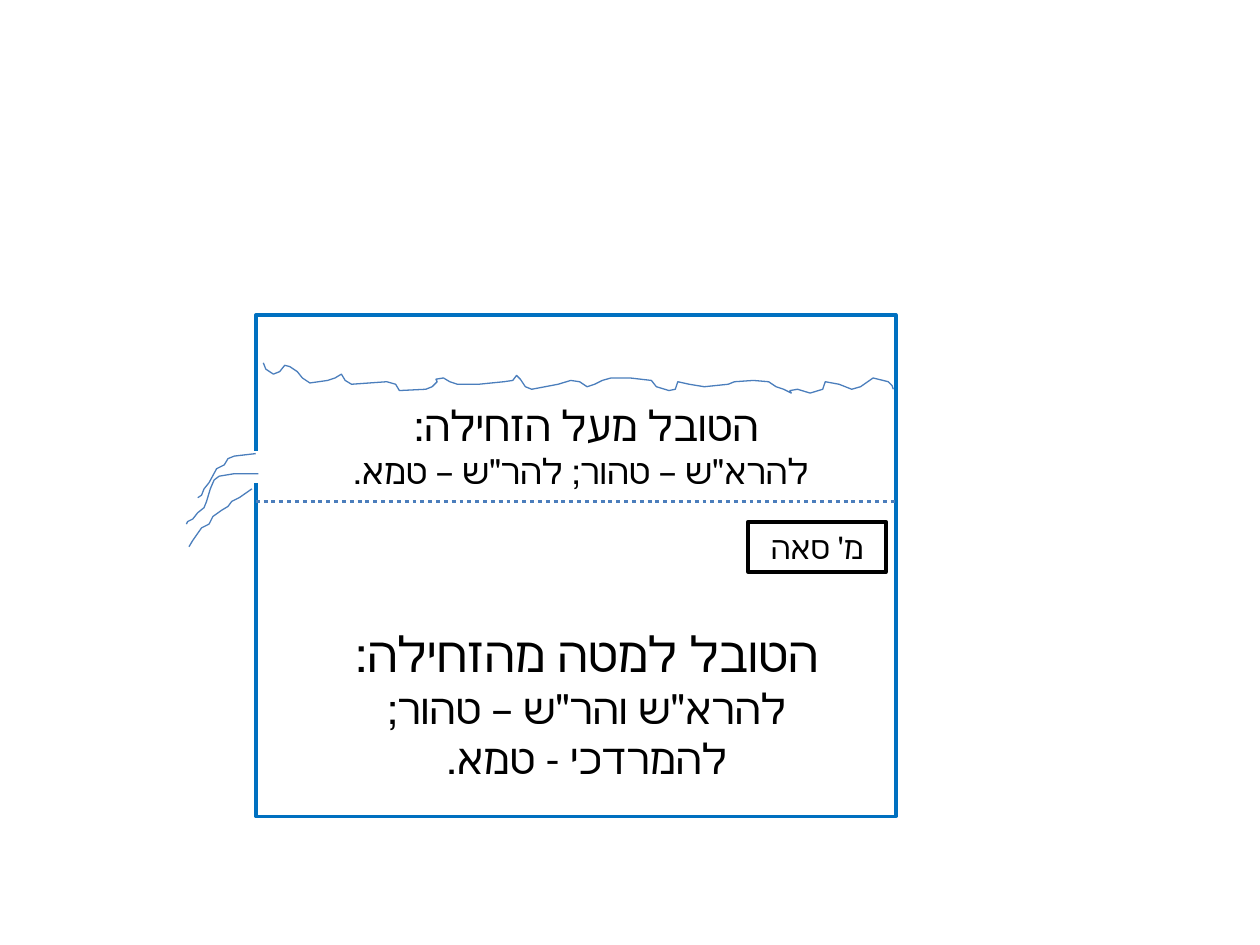
from typing import NamedTuple

from lxml import etree
from pptx import Presentation
from pptx import util as u
from pptx.dml.color import RGBColor
from pptx.enum import dml, shapes, text
from pptx.oxml.ns import qn

PX = 9144  # EMU per px, 100 px to the inch
WHITE, BLACK, TANK_BLUE, WATER_BLUE = "FFFFFF", "000000", "0070C0", "4B7EBC"
FONT = "Calibri"


class Box(NamedTuple):
    left: int
    top: int
    width: int
    height: int


class Run(NamedTuple):
    words: str
    size: int


class Label(NamedTuple):
    box: Box
    paragraphs: list[list[Run]]
    rtl: bool = True
    border: str | None = None


TANK = Box(203, 250, 508, 398)
OUTLET = Box(187, 359, 31, 23)
FLOW_LEVEL = 398

WATER_SURFACE = [
    (209, 288), (211, 293), (217, 297), (222, 295), (226, 290), (230, 291), (236, 295),
    (240, 300), (246, 304), (260, 302), (266, 300), (271, 297), (274, 302), (279, 305),
    (307, 303), (314, 305), (317, 310), (338, 309), (343, 307), (347, 303), (346, 301),
    (352, 300), (357, 303), (363, 305), (380, 305), (400, 303), (407, 302), (410, 298),
    (413, 301), (417, 307), (422, 309), (443, 305), (453, 302), (460, 303), (466, 307),
    (472, 305), (478, 302), (485, 300), (500, 300), (517, 302), (521, 307), (531, 310),
    (536, 309), (538, 303), (547, 305), (559, 307), (578, 305), (583, 303), (598, 302),
    (610, 303), (616, 307), (622, 309), (628, 312), (627, 310), (633, 309), (643, 312),
    (653, 309), (655, 303), (666, 305), (676, 309), (683, 307), (693, 300), (705, 303),
    (708, 306), (709, 309),
]
STREAMS = [
    [(203, 360), (186, 362), (181, 364), (178, 369), (172, 372), (166, 383), (162, 388),
     (160, 393), (157, 395)],
    [(205, 376), (186, 376), (174, 378), (170, 381), (167, 388), (164, 398), (162, 403),
     (157, 407), (153, 412), (149, 414), (148, 416)],
    [(200, 388), (190, 395), (184, 398), (181, 402), (176, 405), (169, 410), (166, 416),
     (160, 419), (153, 429), (150, 434)],
]
LABELS = [
    Label(Box(258, 312, 406, 84), [
        [Run("הטובל מעל הזחילה: ", 24)],
        [Run('להרא"ש – טהור; להר"ש – טמא.', 20)],
    ]),
    Label(Box(250, 490, 431, 138), [
        [Run("הטובל למטה מהזחילה: ", 28),
         Run('להרא"ש והר"ש – טהור; להמרדכי - טמא.', 24)],
    ]),
    Label(Box(594, 414, 109, 40), [[Run("מ' סאה", 18)]], rtl=False, border=BLACK),
]


def color(value: str) -> RGBColor:
    return RGBColor.from_string(value)


def emu(box: Box) -> list[int]:
    return [length * PX for length in box]


def set_line(shape, line_color: str, points: float) -> None:
    shape.line.color.rgb = color(line_color)
    shape.line.width = u.Pt(points)


def add_rectangle(slide, box: Box, line_color: str) -> None:
    shape = slide.shapes.add_shape(shapes.MSO_SHAPE.RECTANGLE, *emu(box))
    shape.shadow.inherit = False
    shape.fill.solid()
    shape.fill.fore_color.rgb = color(WHITE)
    set_line(shape, line_color, 2)


def add_water_line(slide, points: list[tuple[int, int]]) -> None:
    builder = slide.shapes.build_freeform(*points[0], scale=PX)
    builder.add_line_segments(points[1:], close=False)
    shape = builder.convert_to_shape()
    shape.shadow.inherit = False
    shape.fill.background()
    set_line(shape, WATER_BLUE, 0.75)


def add_flow_level(slide) -> None:
    """Dotted line across the tank, below the outlet."""
    y = FLOW_LEVEL * PX
    connector = slide.shapes.add_connector(
        shapes.MSO_CONNECTOR.STRAIGHT,
        TANK.left * PX, y, (TANK.left + TANK.width) * PX, y)
    set_line(connector, WATER_BLUE, 2.25)
    connector.line.dash_style = dml.MSO_LINE.ROUND_DOT
    etree.SubElement(connector._element.spPr, qn("a:effectLst"))


def add_label(slide, label: Label) -> None:
    shape = slide.shapes.add_textbox(*emu(label.box))
    if label.border:
        set_line(shape, label.border, 2.25)
    frame = shape.text_frame
    frame.word_wrap = True
    frame.auto_size = text.MSO_AUTO_SIZE.SHAPE_TO_FIT_TEXT
    for index, runs in enumerate(label.paragraphs):
        paragraph = frame.add_paragraph() if index else frame.paragraphs[0]
        paragraph.alignment = text.PP_ALIGN.CENTER
        if label.rtl:
            paragraph._p.get_or_add_pPr().set("rtl", "1")
        for words, size in runs:
            run = paragraph.add_run()
            run.text = words
            run.font.name = FONT
            run.font.size = u.Pt(size)
            run.font.color.rgb = color(BLACK)


def main() -> None:
    presentation = Presentation()
    presentation.slide_width = 1000 * PX
    presentation.slide_height = 750 * PX
    slide = presentation.slides.add_slide(presentation.slide_layouts[6])

    add_rectangle(slide, TANK, TANK_BLUE)
    add_water_line(slide, WATER_SURFACE)
    add_rectangle(slide, OUTLET, WHITE)
    for stream in STREAMS:
        add_water_line(slide, stream)
    add_flow_level(slide)
    for label in LABELS:
        add_label(slide, label)

    presentation.save("out.pptx")


if __name__ == "__main__":
    main()
